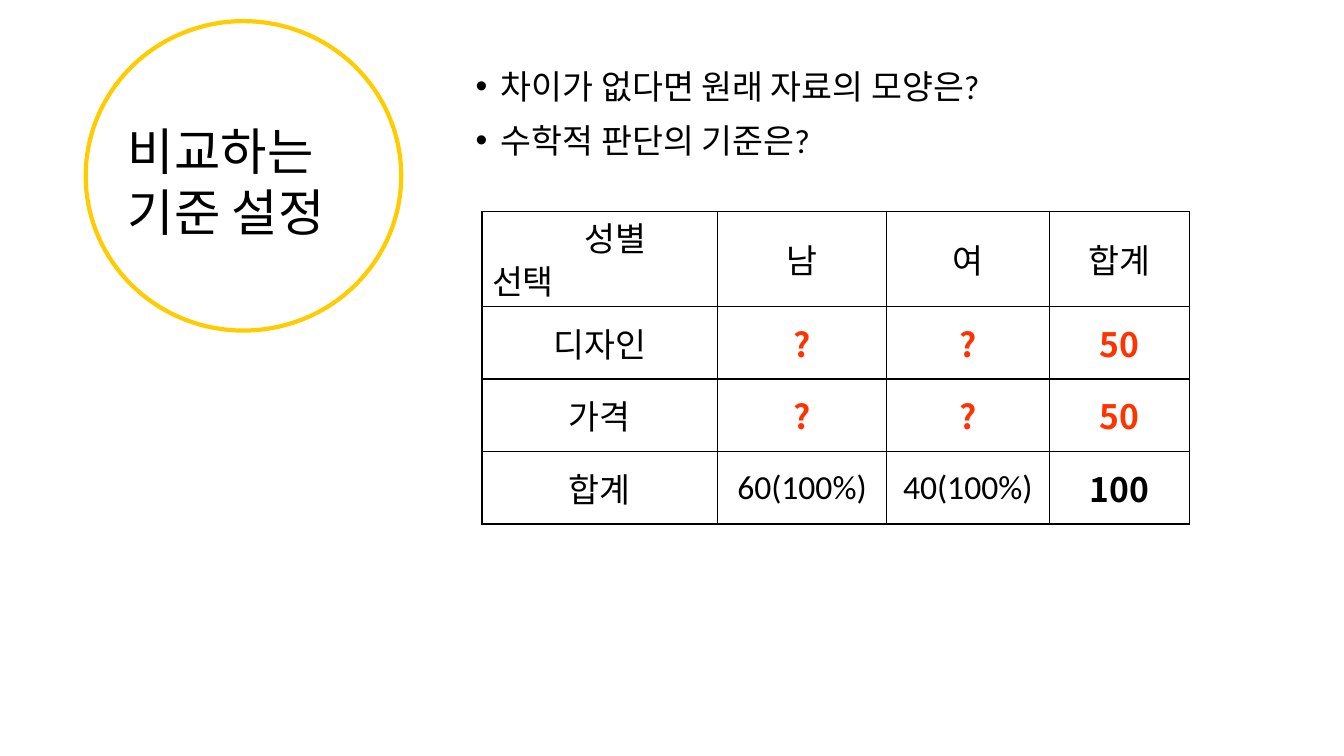
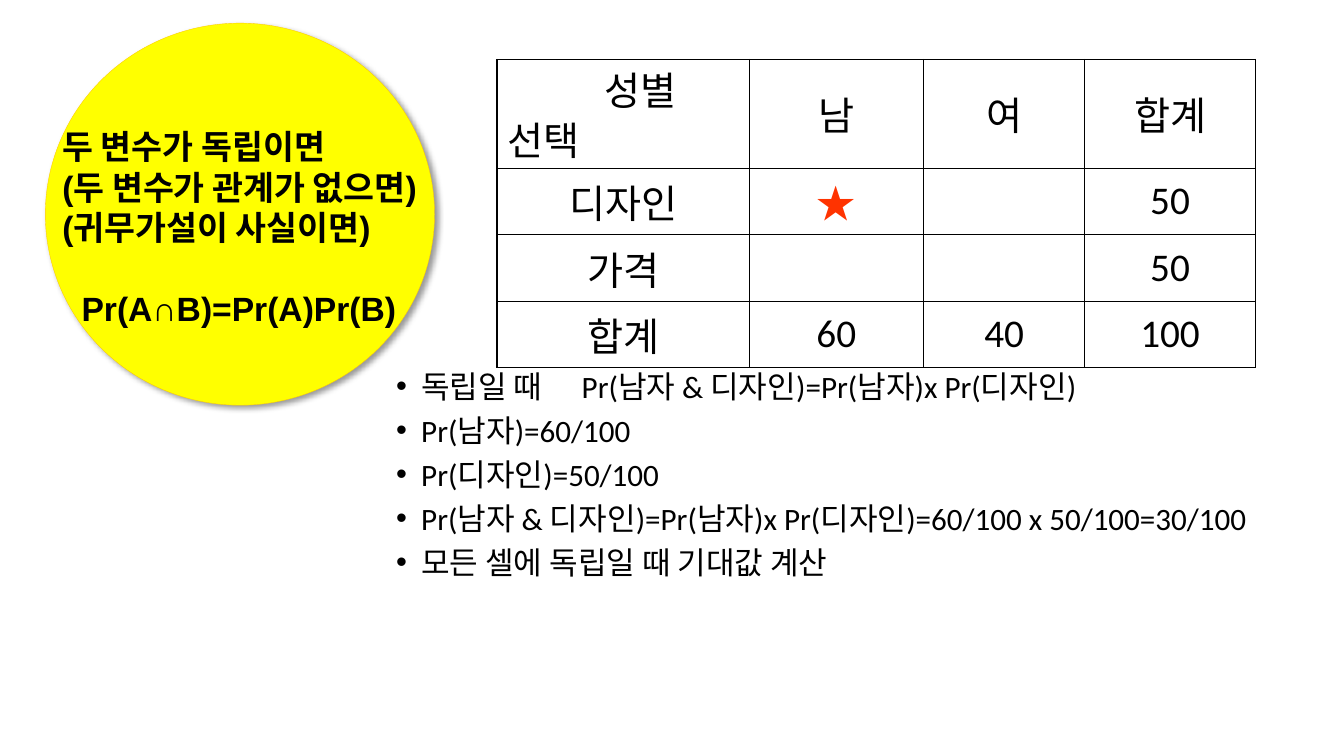
"""Two slides on expected counts when two variables are independent."""
from lxml import etree
from pptx import Presentation
from pptx.dml.color import RGBColor
from pptx.enum import shapes, text
from pptx.oxml import ns
from pptx.util import Inches, Pt

BLACK = RGBColor(0x00, 0x00, 0x00)
RED = RGBColor(0xFF, 0x33, 0x00)
YELLOW = RGBColor(0xFF, 0xFF, 0x00)
GOLD = RGBColor(0xFF, 0xCC, 0x00)
BODY_FONT = "Calibri"
STRONG_FONT = "Noto Sans CJK KR"


def add_xml(parent, tag, **attrs):
    """Append a drawing element with the given attributes."""
    el = etree.SubElement(parent, ns.qn(tag))
    for name, value in attrs.items():
        el.set(name, str(value))
    return el


class Deck:
    """Holds the shared style and the current slide."""

    def __init__(self):
        """Open an empty widescreen presentation."""
        self.prs = Presentation()
        self.prs.slide_width = Inches(13.33)
        self.prs.slide_height = Inches(7.5)
        self.s = None

    def slide(self):
        """Start a new blank slide."""
        self.s = self.prs.slides.add_slide(self.prs.slide_layouts[6])

    def style(self, p, size, font=BODY_FONT, color=BLACK, bold=False):
        """Format every run of a paragraph."""
        for r in p.runs:
            r.font.size = Pt(size)
            r.font.name = font
            r.font.bold = bold
            r.font.color.rgb = color

    def indent(self, p, left, first=0):
        """Set the left margin and first-line indent."""
        pPr = p._p.get_or_add_pPr()
        pPr.set("marL", str(Inches(left)))
        pPr.set("indent", str(Inches(first)))
        return pPr

    def box(self, at, lines, anchor):
        """Add a wrapping text box with one paragraph per line."""
        tf = self.s.shapes.add_textbox(*map(Inches, at)).text_frame
        tf.word_wrap = True
        tf.vertical_anchor = anchor
        tf.text = "\n".join(lines)
        return tf.paragraphs

    def title(self, at, lines, size, font=BODY_FONT, bold=False):
        """Add a vertically centred title."""
        paragraphs = self.box(at, lines, text.MSO_ANCHOR.MIDDLE)
        for p in paragraphs:
            self.style(p, size, font, bold=bold)
        return paragraphs

    def bullets(self, at, lines, size, spacing=1.0):
        """Add a bulleted list; a tuple is one line parted by a wide gap."""
        plain = ["" if isinstance(line, tuple) else line for line in lines]
        paragraphs = self.box(at, plain, text.MSO_ANCHOR.TOP)
        for p, line in zip(paragraphs, lines):
            if isinstance(line, tuple):
                for part in (line[0], " ", line[1]):
                    p.add_run().text = part
                p.runs[1]._r.get_or_add_rPr().set("spc", "2300")
            p.space_before = Pt(10)
            p.line_spacing = spacing
            pPr = self.indent(p, 0.25, -0.25)
            add_xml(pPr, "a:buFont", typeface="Arial")
            add_xml(pPr, "a:buChar", char="•")
            self.style(p, size)

    def circle(self, at, width, fill=None, shadow=False):
        """Add a gold-edged ellipse."""
        sp = self.s.shapes.add_shape(shapes.MSO_SHAPE.OVAL, *map(Inches, at))
        sp.shadow.inherit = False
        sp.line.color.rgb = GOLD
        sp.line.width = Pt(width)
        if fill is None:
            sp.fill.background()
        else:
            sp.fill.solid()
            sp.fill.fore_color.rgb = fill
        if shadow:
            effects = sp._element.spPr.find(ns.qn("a:effectLst"))
            outer = add_xml(effects, "a:outerShdw", blurRad=Pt(4), dist=Pt(3),
                            dir=45 * 60000, algn="ctr", rotWithShape=0)
            color = add_xml(outer, "a:srgbClr", val=BLACK)
            add_xml(color, "a:alpha", val=40000)

    def borders(self, cell):
        """Draw thin black lines round a cell and leave it unfilled."""
        tcPr = cell._tc.get_or_add_tcPr()
        for side in ("a:lnL", "a:lnR", "a:lnT", "a:lnB"):
            ln = add_xml(tcPr, side, w=Pt(1))
            add_xml(add_xml(ln, "a:solidFill"), "a:srgbClr", val=BLACK)
        cell.fill.background()

    def table(self, left, top, cols, row_heights, rows, size, strong):
        """Add a cross table; strong maps (row, column) to a bold colour."""
        frame = self.s.shapes.add_table(
            len(rows), len(cols), Inches(left), Inches(top),
            Inches(sum(cols)), Inches(sum(row_heights)))
        tbl = frame.table
        tbl.first_row = tbl.horz_banding = False
        for col, width in zip(tbl.columns, cols):
            col.width = Inches(width)
        for row, height in zip(tbl.rows, row_heights):
            row.height = Inches(height)
        for i, row in enumerate(rows):
            for j, value in enumerate(row):
                cell = tbl.cell(i, j)
                cell.vertical_anchor = text.MSO_ANCHOR.MIDDLE
                cell.text_frame.text = value
                self.borders(cell)
                for p in cell.text_frame.paragraphs:
                    p.alignment = text.PP_ALIGN.CENTER
                    p.space_before = Pt(size * 0.2)
                    if (i, j) in strong:
                        self.style(p, size, STRONG_FONT, strong[i, j], True)
                    else:
                        self.style(p, size)
        across, down = tbl.cell(0, 0).text_frame.paragraphs
        across.line_spacing = 0.9
        self.indent(across, size / 80)
        down.line_spacing = 0.7
        down.alignment = text.PP_ALIGN.LEFT


HEADER = ["성별\n선택", "남", "여", "합계"]


def criterion_slide(d):
    """Ask what the table would look like without a difference."""
    d.slide()
    d.title((1.17, 0.6, 2.91, 2.39), ["비교하는", "기준 설정"], 36)
    d.bullets((4.62, 0.6, 6.77, 1.18),
              ["차이가 없다면 원래 자료의 모양은?", "수학적 판단의 기준은?"], 24)
    strong = {(i, j): RED for i in (1, 2) for j in (1, 2, 3)}
    strong[3, 3] = BLACK
    d.table(4.78, 2.1, [2.34, 1.67, 1.62, 1.39], [0.94] + [0.72] * 3,
            [HEADER,
             ["디자인", "?", "?", "50"],
             ["가격", "?", "?", "50"],
             ["합계", "60(100%)", "40(100%)", "100"]], 24, strong)
    d.circle((0.85, 0.21, 3.13, 3.07), 3)


def independence_slide(d):
    """Work out one expected count under independence."""
    d.slide()
    d.circle((0.45, 0.23, 3.86, 3.79), 0.25, YELLOW, shadow=True)
    lines = d.title((0.52, 0.89, 4.09, 2.73),
                    ["두 변수가 독립이면", "(두 변수가 관계가 없으면)",
                     "(귀무가설이 사실이면)", "Pr(A∩B)=Pr(A)Pr(B)"],
                    24, "Arial", True)
    lines[-1].space_before = Pt(29)
    d.indent(lines[-1], 0.19)
    d.bullets((3.83, 3.67, 9.06, 2.28),
              [("독립일 때", "Pr(남자 & 디자인)=Pr(남자)x Pr(디자인)"),
               "Pr(남자)=60/100",
               "Pr(디자인)=50/100",
               "Pr(남자 & 디자인)=Pr(남자)x Pr(디자인)=60/100 x 50/100=30/100",
               "모든 셀에 독립일 때 기대값 계산"], 22.2, 0.8)
    d.table(4.93, 0.59, [2.5, 1.73, 1.6, 1.69], [1.08] + [0.66] * 3,
            [HEADER,
             ["디자인", "★", "", "50"],
             ["가격", "", "", "50"],
             ["합계", "60", "40", "100"]], 28, {(1, 1): RED})


def main():
    """Build and save the deck."""
    d = Deck()
    criterion_slide(d)
    independence_slide(d)
    d.prs.save("out.pptx")


if __name__ == "__main__":
    main()
